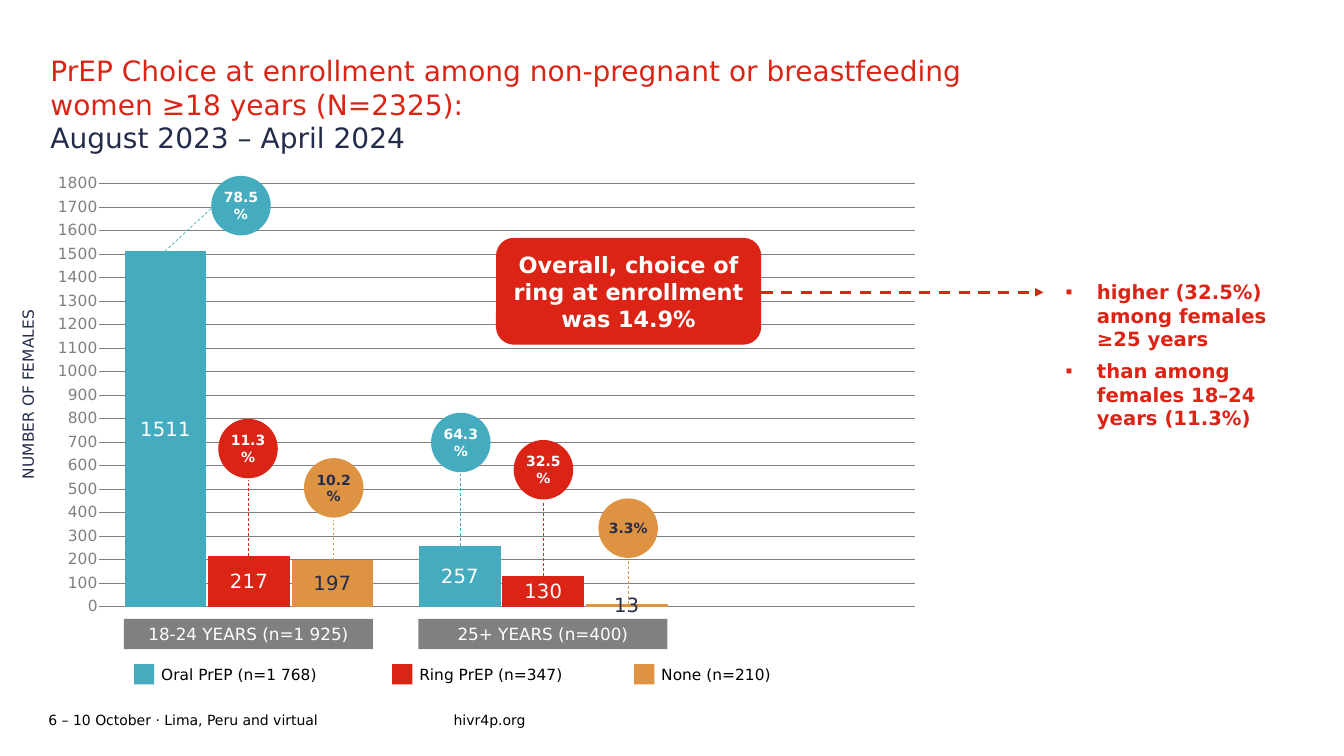
from lxml import etree
from pptx import Presentation
from pptx import util as u
from pptx.chart import data as chart_data
from pptx.dml import color
from pptx.enum import chart as chart_enum, dml, shapes, text
from pptx.oxml import ns, parse_xml

FONT = "DejaVu Sans"
TEAL, RED, ORANGE = "45ABBF", "DB2415", "DE9343"
NAVY, GREY, WHITE, BLACK = "242C4B", "808080", "FFFFFF", "000000"
LEFT, CENTER = text.PP_ALIGN.LEFT, text.PP_ALIGN.CENTER
TOP, MIDDLE = text.MSO_ANCHOR.TOP, text.MSO_ANCHOR.MIDDLE
RECTANGLE, OVAL = shapes.MSO_SHAPE.RECTANGLE, shapes.MSO_SHAPE.OVAL
AXIS_MAX, AXIS_STEP = 1800, 100
BAR_WIDTH, GROUP_STEP, DIAMETER = 0.81, 2.92, 0.59

# Series: name, fill, text colour, legend offset
SERIES = [("Oral PrEP (n=1 768)", TEAL, WHITE, 0),
          ("Ring PrEP (n=347)", RED, WHITE, 2.56),
          ("None (n=210)", ORANGE, NAVY, 4.96)]
# Age groups: value, share, bubble centre from the top left of the plot
GROUPS = [("18-24 YEARS (n=1 925)", [(1511, "78.5%", 1.41, 0.22),
                                     (217, "11.3%", 1.48, 2.63),
                                     (197, "10.2%", 2.33, 3.02)]),
          ("25+ YEARS (n=400)", [(257, "64.3%", 3.59, 2.57),
                                 (130, "32.5%", 4.41, 2.84),
                                 (13, "3.3%", 5.25, 3.42)])]


def rgb(value):
    return color.RGBColor.from_string(value)


def inches(*lengths):
    return [u.Inches(length) for length in lengths]


def style_font(font, size, colour, bold=False):
    font.name, font.size, font.bold = FONT, u.Pt(size), bold
    font.color.rgb = rgb(colour)


def add_run(paragraph, words, size, colour, bold=False):
    run = paragraph.add_run()
    run.text = words
    style_font(run.font, size, colour, bold)


def set_frame(shape, anchor, margins):
    frame = shape.text_frame
    frame.word_wrap, frame.vertical_anchor = True, anchor
    frame.auto_size = text.MSO_AUTO_SIZE.NONE
    (frame.margin_left, frame.margin_top,
     frame.margin_right, frame.margin_bottom) = inches(*margins)
    return frame


def write(shape, words, size, colour, bold=False, align=LEFT, anchor=TOP,
          margins=(0.1, 0.05, 0.1, 0.05)):
    paragraph = set_frame(shape, anchor, margins).paragraphs[0]
    paragraph.alignment = align
    add_run(paragraph, words, size, colour, bold)


def add_block(slide, kind, box, fill):
    shape = slide.shapes.add_shape(kind, *inches(*box))
    shape.shadow.inherit = False
    shape.fill.solid()
    shape.fill.fore_color.rgb = rgb(fill)
    shape.line.fill.background()
    return shape


def add_line(slide, start, end, colour, width=0.5, dashed=False, arrow=False):
    line = slide.shapes.add_connector(shapes.MSO_CONNECTOR.STRAIGHT,
                                      *inches(*start, *end))
    line.line.color.rgb = rgb(colour)
    line.line.width = u.Pt(width)
    if dashed:
        line.line.dash_style = dml.MSO_LINE.DASH
    if arrow:
        etree.SubElement(line.line._get_or_add_ln(), ns.qn("a:tailEnd"), type="triangle")
    etree.SubElement(line._element.spPr, ns.qn("a:effectLst"))


def add_title(slide, box):
    title = slide.shapes.title
    title.left, title.top, title.width, title.height = inches(*box)
    paragraph = set_frame(title, MIDDLE, (0, 0.05, 0.1, 0.05)).paragraphs[0]
    paragraph.alignment = LEFT
    add_run(paragraph, "PrEP Choice at enrollment among non-pregnant or "
            "breastfeeding women ≥18 years (N=2325):", 20, RED)
    paragraph.add_line_break()
    add_run(paragraph, "August 2023 – April 2024", 20, NAVY)


def add_gridlines(slide, plot):
    left, top, width, height = plot
    steps = AXIS_MAX // AXIS_STEP
    for step in range(steps + 1):
        y = top + height * step / steps
        add_line(slide, (left, y), (left + width, y), GREY)


def place_plot(chart, frame, inner):
    """Fix the inner plot area and clear the chart background."""
    fractions = [("x", (inner[0] - frame[0]) / frame[2]),
                 ("y", (inner[1] - frame[1]) / frame[3]),
                 ("w", inner[2] / frame[2]), ("h", inner[3] / frame[3])]
    sizes = "".join(f'<c:{name} val="{value:.4f}"/>' for name, value in fractions)
    layout = parse_xml(f'<c:layout {ns.nsdecls("c")}><c:manualLayout>'
                       '<c:layoutTarget val="inner"/><c:xMode val="edge"/>'
                       f'<c:yMode val="edge"/>{sizes}</c:manualLayout></c:layout>')
    chart_element = chart._chartSpace.find(ns.qn("c:chart"))
    plot_area = chart_element.find(ns.qn("c:plotArea"))
    for old in plot_area.findall(ns.qn("c:layout")):
        plot_area.remove(old)
    plot_area.insert(0, layout)
    chart_element.addnext(parse_xml(
        f'<c:spPr {ns.nsdecls("c", "a")}><a:noFill/><a:ln><a:noFill/></a:ln></c:spPr>'))


def add_columns(slide, plot):
    left, top, _, height = plot
    data = chart_data.CategoryChartData()
    data.categories = [name for name, _ in GROUPS]
    for index, (name, *_) in enumerate(SERIES):
        data.add_series(name, [bars[index][0] for _, bars in GROUPS])
    inner = (left + 0.03, top, GROUP_STEP * len(GROUPS), height)
    frame = (left - 0.63, top - 0.22, inner[2] + 0.76, height + 0.4)
    chart = slide.shapes.add_chart(chart_enum.XL_CHART_TYPE.COLUMN_CLUSTERED,
                                   *inches(*frame), data).chart
    chart.has_title = chart.has_legend = False
    style_font(chart.font, 11, GREY)
    place_plot(chart, frame, inner)
    columns = chart.plots[0]
    columns.vary_by_categories = False
    columns.gap_width, columns.overlap = 56, -2
    chart.category_axis.visible = False
    axis = chart.value_axis
    axis.minimum_scale, axis.maximum_scale, axis.major_unit = 0, AXIS_MAX, AXIS_STEP
    axis.has_major_gridlines = False
    axis.major_tick_mark = chart_enum.XL_TICK_MARK.NONE
    axis.format.line.fill.background()
    style_font(axis.tick_labels.font, 11, GREY)
    for series, (_, fill, ink, _) in zip(columns.series, SERIES):
        series.format.fill.solid()
        series.format.fill.fore_color.rgb = rgb(fill)
        labels = series.data_labels
        labels.show_value = True
        labels.position = chart_enum.XL_LABEL_POSITION.CENTER
        style_font(labels.font, 14, ink)


def add_bubbles(slide, plot):
    left, top, _, height = plot
    radius = DIAMETER / 2
    for _, bars in GROUPS:
        for (value, share, dx, dy), (_, fill, ink, _) in zip(bars, SERIES):
            x, y = left + dx, top + dy
            bar_top = top + height * (1 - value / AXIS_MAX)
            if y + radius < bar_top - 0.25:
                start, end = (x, bar_top), (x, y + radius + 0.02)
            else:  # bubble beside its bar: slanted leader
                start, end = (left + 0.25 + BAR_WIDTH / 2, bar_top), (x - radius + 0.03, y)
            add_line(slide, start, end, fill, dashed=True)
            bubble = add_block(slide, OVAL, (x - radius, y - radius, DIAMETER, DIAMETER), fill)
            write(bubble, share, 10, ink, True, CENTER, MIDDLE, (0, 0, 0, 0))


def add_axis_names(slide, plot):
    left, top, _, height = plot
    name = slide.shapes.add_textbox(*inches(left - 2.67, top + 1.95, 3.94, 0.29))
    name.rotation = 270
    write(name, "NUMBER OF FEMALES", 11, NAVY, align=CENTER)
    for index, (group, _) in enumerate(GROUPS):
        box = (left + 0.25 + index * GROUP_STEP, top + height + 0.12, 2.47, 0.3)
        write(add_block(slide, RECTANGLE, box, GREY), group, 12, WHITE,
              align=CENTER, anchor=MIDDLE)


def add_legend(slide, left, top):
    for name, fill, _, offset in SERIES:
        x = left + offset
        add_block(slide, RECTANGLE, (x, top + 0.04, 0.2, 0.2), fill)
        label = slide.shapes.add_textbox(*inches(x + 0.17, top, 2.48, 0.29))
        write(label, name, 11, BLACK)


def add_callout(slide, box):
    left, top, width, _ = box
    callout = add_block(slide, shapes.MSO_SHAPE.ROUNDED_RECTANGLE, box, RED)
    write(callout, "Overall, choice of ring at enrollment was 14.9%", 16, WHITE,
          True, CENTER, MIDDLE)
    y = top + 0.54
    add_line(slide, (left + width, y), (left + width + 2.8, y), RED, 2, True, True)


def add_findings(slide, box):
    body = slide.placeholders[1]
    body.left, body.top, body.width, body.height = inches(*box)
    frame = set_frame(body, TOP, (0.1, 0.05, 0.1, 0.05))
    findings = ["higher (32.5%) among females ≥25 years",
                "than among females 18–24 years (11.3%)"]
    for index, finding in enumerate(findings):
        paragraph = frame.add_paragraph() if index else frame.paragraphs[0]
        properties = paragraph._p.get_or_add_pPr()
        properties.set("marL", str(u.Inches(0.31)))
        properties.set("indent", str(-u.Inches(0.31)))
        etree.SubElement(properties, ns.qn("a:buChar"), char="▪")
        paragraph.space_before, paragraph.space_after = u.Pt(0), u.Pt(6)
        add_run(paragraph, finding, 14, RED, True)


def add_footer(slide, left, top):
    for offset, width, words in [(0, 4.02, "6 – 10 October · Lima, Peru and virtual"),
                                 (4.02, 1.93, "hivr4p.org")]:
        box = slide.shapes.add_textbox(*inches(left + offset, top, width, 0.24))
        write(box, words, 10, BLACK, anchor=MIDDLE, margins=(0, 0, 0, 0))


def main():
    presentation = Presentation()
    presentation.slide_width, presentation.slide_height = inches(13.33, 7.5)
    slide = presentation.slides.add_slide(presentation.slide_layouts[1])
    plot = (0.98, 1.82, 8.1, 4.2)
    add_title(slide, (0.5, 0.5, 9.43, 1.06))
    add_gridlines(slide, plot)
    add_columns(slide, plot)
    add_bubbles(slide, plot)
    add_axis_names(slide, plot)
    add_legend(slide, 1.33, 6.55)
    add_callout(slide, (4.92, 2.36, 2.63, 1.06))
    add_findings(slide, (10.47, 2.73, 2.38, 1.6))
    add_footer(slide, 0.48, 7.02)
    presentation.save("out.pptx")


if __name__ == "__main__":
    main()
